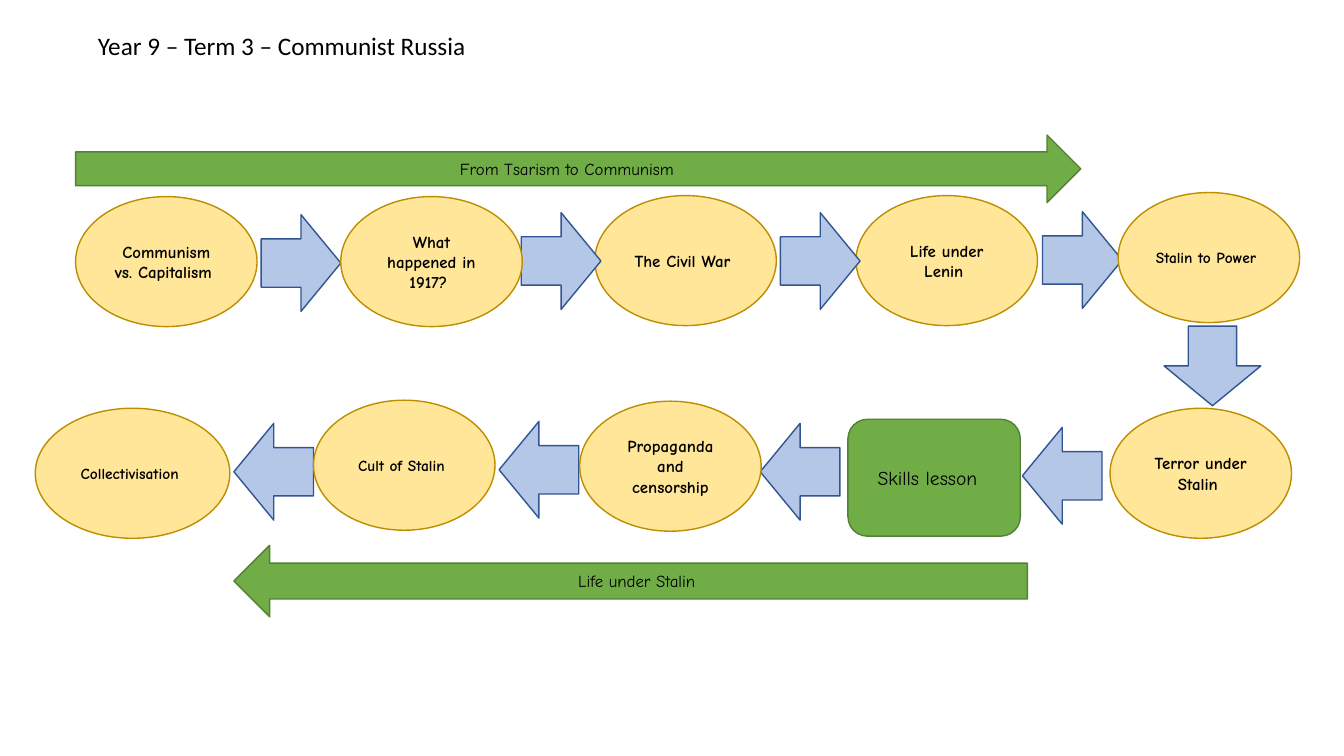
from pptx import Presentation
from pptx.dml.color import RGBColor
from pptx.enum.shapes import MSO_SHAPE as Kind
from pptx.enum.text import MSO_ANCHOR as Anchor, MSO_AUTO_SIZE as Fit, PP_ALIGN as Align
from pptx.util import Inches, Pt

BLACK = RGBColor(0x00, 0x00, 0x00)
CREAM = RGBColor(0xFF, 0xE6, 0x99)
GOLD = RGBColor(0xBD, 0x8E, 0x00)
BLUE = RGBColor(0xB4, 0xC7, 0xE7)
NAVY = RGBColor(0x32, 0x54, 0x91)
GREEN = RGBColor(0x70, 0xAD, 0x47)
MOSS = RGBColor(0x53, 0x80, 0x35)

OVAL_W, OVAL_H = 1.8, 1.29
STEP_W, STEP_H = 0.79, 0.96


def write(shape, text, size=12, bold=False, font="Comic Neue",
          align=Align.CENTER, anchor=Anchor.MIDDLE):
    frame = shape.text_frame
    frame.word_wrap = True
    frame.vertical_anchor = anchor
    para = frame.paragraphs[0]
    para.alignment = align
    run = para.add_run()
    run.text = text
    run.font.name = font
    run.font.size = Pt(size)
    run.font.bold = bold
    run.font.color.rgb = BLACK


def draw(slide, kind, box, fill, edge):
    shape = slide.shapes.add_shape(kind, *map(Inches, box))
    shape.shadow.inherit = False
    shape.fill.solid()
    shape.fill.fore_color.rgb = fill
    shape.line.color.rgb = edge
    shape.line.width = Pt(1)
    return shape


def head(slide, box, text):
    title = slide.shapes.title
    title.left, title.top, title.width, title.height = map(Inches, box)
    write(title, text, size=18, font="Calibri", align=Align.LEFT, anchor=Anchor.TOP)
    title.text_frame.auto_size = Fit.NONE


def topic(slide, left, top, text, size=12, width=OVAL_W):
    oval = draw(slide, Kind.OVAL, (left, top, width, OVAL_H), CREAM, GOLD)
    write(oval, text, size=size, bold=True)


def step(slide, left, top, turn=0):
    arrow = draw(slide, Kind.RIGHT_ARROW, (left, top, STEP_W, STEP_H), BLUE, NAVY)
    arrow.rotation = turn


def band(slide, kind, box, text):
    write(draw(slide, kind, box, GREEN, MOSS), text)


def rise(slide, left, top):
    """Upper row, read left to right; then the turn down to the next row."""
    # Topics behind the arrows
    topic(slide, left, top + 0.04, "Communism vs. Capitalism ")
    topic(slide, left + 5.15, top + 0.03, "The Civil War ")
    topic(slide, left + 7.74, top + 0.03, "Life under Lenin ")
    # Arrows
    for dx, dy in ((1.84, 0.22), (4.42, 0.2), (6.99, 0.2), (9.59, 0.19)):
        step(slide, left + dx, top + dy)
    step(slide, left + 10.88, top + 1.24, turn=90)
    # Topics in front of the arrows
    topic(slide, left + 2.63, top + 0.04, "What happened in 1917? ")
    topic(slide, left + 10.34, top, "Stalin to Power ", size=11)


def rule(slide, left, top):
    """Lower row, read right to left."""
    # Arrows
    for dx, dy in ((9.79, 0.27), (7.19, 0.23), (4.6, 0.21), (1.97, 0.23)):
        step(slide, left + dx, top + dy, turn=180)
    # Topics
    topic(slide, left + 10.66, top + 0.08, "Terror under Stalin ")
    topic(slide, left + 5.4, top + 0.01, "Propaganda and censorship")
    topic(slide, left + 2.76, top, "Cult of Stalin ", size=11)
    topic(slide, left, top + 0.08, "Collectivisation ", size=11, width=1.93)
    # Skills lesson
    card = draw(slide, Kind.ROUNDED_RECTANGLE, (left + 8.06, top + 0.19, 1.71, 1.16),
                GREEN, MOSS)
    write(card, "Skills lesson  ", size=14)


def main():
    deck = Presentation()
    deck.slide_width, deck.slide_height = Inches(13.33), Inches(7.5)
    slide = deck.slides.add_slide(deck.slide_layouts[5])
    head(slide, (0.87, 0.25, 7.98, 0.4), "Year 9 – Term 3 – Communist Russia")
    rise(slide, 0.75, 1.91)
    band(slide, Kind.RIGHT_ARROW, (0.75, 1.34, 9.97, 0.67), "From Tsarism to Communism ")
    rule(slide, 0.35, 3.97)
    band(slide, Kind.LEFT_ARROW, (2.32, 5.41, 7.87, 0.71), "Life under Stalin ")
    deck.save("out.pptx")


if __name__ == "__main__":
    main()
